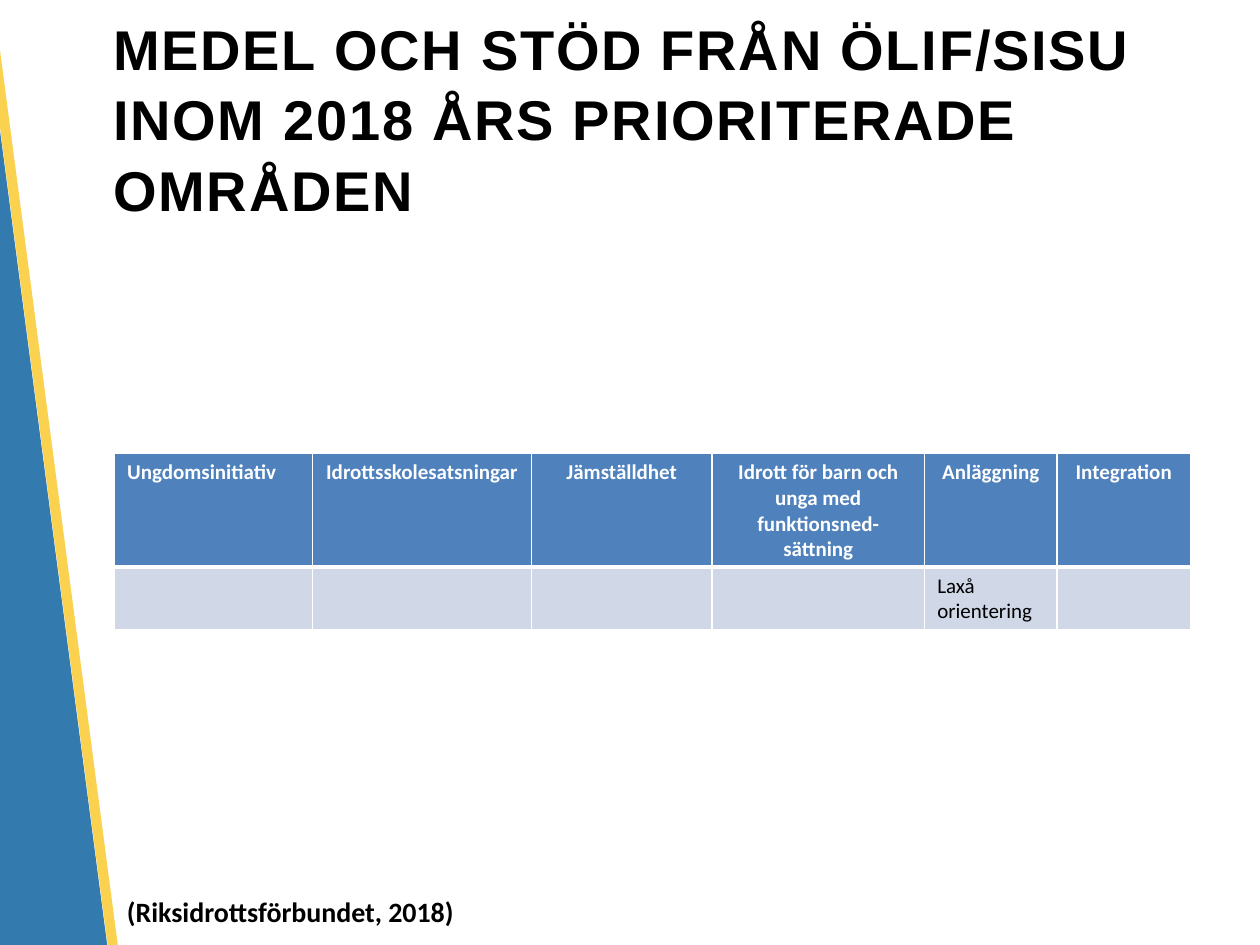
from dataclasses import dataclass

from lxml import etree
from pptx import Presentation, util as u
from pptx.dml.color import RGBColor
from pptx.enum import shapes, text
from pptx.oxml.ns import qn


@dataclass(frozen=True)
class Theme:
    blue: str = "005B9C"
    yellow: str = "FAC828"
    ink: str = "000000"
    white: str = "FFFFFF"
    header: str = "4F81BD"
    body: str = "D0D8E8"
    title_font: str = "Arial"
    text_font: str = "Calibri"
    title_size: int = 32
    source_size: int = 16
    table_size: int = 12
    band_angle: float = 352.5


class SlideBuilder:
    """Places elements on a grid of 100 columns by 75 rows."""

    def __init__(self, deck, theme):
        self.theme = theme
        self.page = deck.slides.add_slide(deck.slide_layouts[6])
        self.column = deck.slide_width / 100
        self.row = deck.slide_height / 75

    def place(self, left, top, width, height):
        return (u.Emu(round(left * self.column)), u.Emu(round(top * self.row)),
                u.Emu(round(width * self.column)), u.Emu(round(height * self.row)))

    def style(self, font, name, size, color, bold):
        font.name, font.size, font.bold = name, u.Pt(size), bold
        font.color.rgb = RGBColor.from_string(color)

    def band(self, area, color, opacity):
        """Draw a tilted, partly transparent stripe."""
        stripe = self.page.shapes.add_shape(
            shapes.MSO_SHAPE.RECTANGLE, *self.place(*area))
        stripe.rotation = self.theme.band_angle
        stripe.shadow.inherit = False
        stripe.line.fill.background()
        stripe.fill.solid()
        stripe.fill.fore_color.rgb = RGBColor.from_string(color)
        tint = stripe.fill._xPr.find(".//" + qn("a:srgbClr"))
        etree.SubElement(tint, qn("a:alpha"), val=str(opacity * 1000))

    def text_box(self, area, words, name, size, wrap=True):
        box = self.page.shapes.add_textbox(*self.place(*area))
        frame = box.text_frame
        frame.text = words
        frame.word_wrap = wrap
        span = frame.paragraphs[0].runs[0]
        self.style(span.font, name, size, self.theme.ink, True)
        return frame

    def title(self, area, words):
        frame = self.text_box(area, words, self.theme.title_font, self.theme.title_size)
        frame.vertical_anchor = text.MSO_ANCHOR.MIDDLE
        para = frame.paragraphs[0]
        para.line_spacing = 1.05
        para.runs[0].font._element.set("spc", "100")

    def source(self, area, words):
        frame = self.text_box(area, words, self.theme.text_font,
                              self.theme.source_size, wrap=False)
        frame.auto_size = text.MSO_AUTO_SIZE.SHAPE_TO_FIT_TEXT

    def borders(self, cell, widths):
        for side, width in widths.items():
            line = etree.SubElement(cell._tc.get_or_add_tcPr(), qn(f"a:ln{side}"),
                                    w=str(u.Pt(width)))
            fill = etree.SubElement(line, qn("a:solidFill"))
            etree.SubElement(fill, qn("a:srgbClr"), val=self.theme.white)

    def table(self, left, top, widths, heights, rows):
        area = self.place(left, top, sum(widths), sum(heights))
        grid = self.page.shapes.add_table(len(rows), len(widths), *area).table
        for column, width in zip(grid.columns, widths):
            column.width = u.Emu(round(width * self.column))
        for line, height in zip(grid.rows, heights):
            line.height = u.Emu(round(height * self.row))
        for r, words in enumerate(rows):
            for c, word in enumerate(words):
                self.cell(grid.cell(r, c), word, header=r == 0, centred=r == 0 and c > 0)

    def cell(self, cell, word, header, centred):
        theme = self.theme
        self.borders(cell, {"L": 1, "R": 1, "T": 1 if header else 3,
                            "B": 3 if header else 1})
        cell.fill.solid()
        cell.fill.fore_color.rgb = RGBColor.from_string(
            theme.header if header else theme.body)
        cell.text_frame.text = word
        para = cell.text_frame.paragraphs[0]
        if centred:
            para.alignment = text.PP_ALIGN.CENTER
        fonts = [span.font for span in para.runs] or [para.font]
        for font in fonts:
            self.style(font, theme.text_font, theme.table_size,
                       theme.white if header else theme.ink, header)


def main():
    deck = Presentation()
    deck.slide_width, deck.slide_height = u.Inches(10), u.Inches(7.5)
    theme = Theme()
    slide = SlideBuilder(deck, theme)

    slide.band((-5.2, -16.4, 9.1, 113.3), theme.blue, 80)
    slide.band((3.8, -17.7, 0.8, 113.2), theme.yellow, 81)
    slide.title((8, 3, 86.5, 12.5),
                "MEDEL OCH STÖD FRÅN ÖLIF/SISU INOM 2018 ÅRS PRIORITERADE OMRÅDEN")
    slide.source((9.1, 70.5, 28.4, 3.7), "(Riksidrottsförbundet, 2018)")
    slide.table(9.1, 36, widths=(15.7, 17.4, 14.3, 16.9, 10.5, 10.6), heights=(9, 5), rows=[
        ("Ungdomsinitiativ", "Idrottsskolesatsningar", "Jämställdhet",
         "Idrott för barn och unga med funktionsned-sättning", "Anläggning", "Integration"),
        ("", "", "", "", "Laxå orientering", ""),
    ])
    deck.save("out.pptx")


if __name__ == "__main__":
    main()
